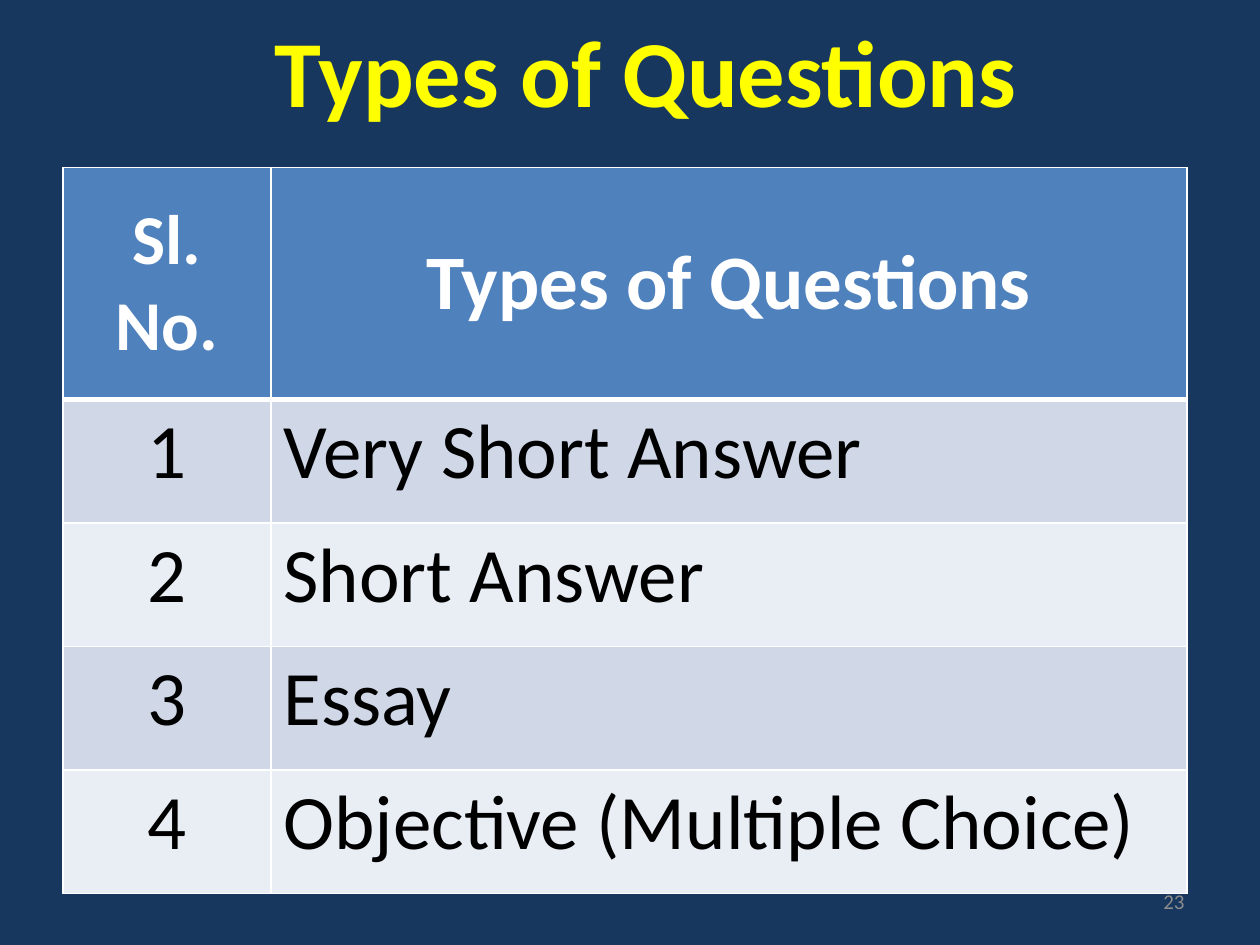
from lxml import etree
from pptx import Presentation
from pptx.dml.color import RGBColor
from pptx.enum import text as t
from pptx.oxml import ns
from pptx.util import Inches, Pt

TITLE = "Types of Questions"
HEAD = ("Sl. No.", TITLE)
KINDS = ["Very Short Answer", "Short Answer", "Essay", "Objective (Multiple Choice)"]
PAGE = "23"

NAVY, BLUE, WHITE, BLACK = "17375E", "4F81BD", "FFFFFF", "000000"
YELLOW, GREY = "FFFF00", "8C8C8C"
BANDS = ("D0D8E8", "E9EDF4")
COLS = (1.65, 7.27)
HEAD_H, ROW_H = 1.84, 0.98
LEFT, CENTER, RIGHT = t.PP_ALIGN.LEFT, t.PP_ALIGN.CENTER, t.PP_ALIGN.RIGHT
MIDDLE, TOP = t.MSO_ANCHOR.MIDDLE, t.MSO_ANCHOR.TOP


def paint(fill, color):
    fill.solid()
    fill.fore_color.rgb = RGBColor.from_string(color)


def write(frame, words, size, color, align, bold=False):
    para = frame.paragraphs[0]
    para.alignment = align
    run = para.add_run()
    run.text = words
    run.font.name = "Calibri"
    run.font.size = Pt(size)
    run.font.bold = bold
    run.font.color.rgb = RGBColor.from_string(color)


def add_label(slide, box, *style):
    frame = slide.shapes.add_textbox(*map(Inches, box)).text_frame
    frame.word_wrap = True
    frame.vertical_anchor = MIDDLE
    write(frame, *style)


def edge(cell, side, width):
    """Draw a white border on one side (L, R, T or B) of a cell."""
    props = cell._tc.get_or_add_tcPr()
    line = etree.SubElement(props, ns.qn("a:ln" + side), w=str(Pt(width)))
    fill = etree.SubElement(line, ns.qn("a:solidFill"))
    etree.SubElement(fill, ns.qn("a:srgbClr"), val=WHITE)


def fill_cell(cell, words, size, color, align, bold, anchor, back, top, base):
    for side, width in (("L", 1), ("R", 1), ("T", top), ("B", base)):
        edge(cell, side, width)
    paint(cell.fill, back)
    cell.vertical_anchor = anchor
    write(cell.text_frame, words, size, color, align, bold)


def add_grid(slide):
    count = len(KINDS)
    box = (0.5, 1.33, sum(COLS), HEAD_H + count * ROW_H)
    table = slide.shapes.add_table(count + 1, len(COLS), *map(Inches, box)).table
    for col, width in zip(table.columns, COLS):
        col.width = Inches(width)
    for i, row in enumerate(table.rows):
        row.height = Inches(ROW_H if i else HEAD_H)

    for col, (words, size) in enumerate(zip(HEAD, (40, 44))):
        fill_cell(table.cell(0, col), words, size, WHITE, CENTER, True, MIDDLE, BLUE, 1, 3)
    for i, kind in enumerate(KINDS, 1):
        back = BANDS[(i - 1) % 2]
        top = 3 if i == 1 else 1
        for col, (words, align) in enumerate(((str(i), CENTER), (kind, LEFT))):
            fill_cell(table.cell(i, col), words, 44, BLACK, align, False, TOP, back, top, 1)


def main():
    deck = Presentation()
    deck.slide_width, deck.slide_height = Inches(10), Inches(7.5)
    slide = deck.slides.add_slide(deck.slide_layouts[6])
    paint(slide.background.fill, NAVY)
    add_label(slide, (0.25, 0.08, 9.75, 0.94), TITLE, 54, YELLOW, CENTER, True)
    add_grid(slide)
    add_label(slide, (7.17, 6.95, 2.33, 0.4), PAGE, 12, GREY, RIGHT)
    deck.save("out.pptx")


if __name__ == "__main__":
    main()
